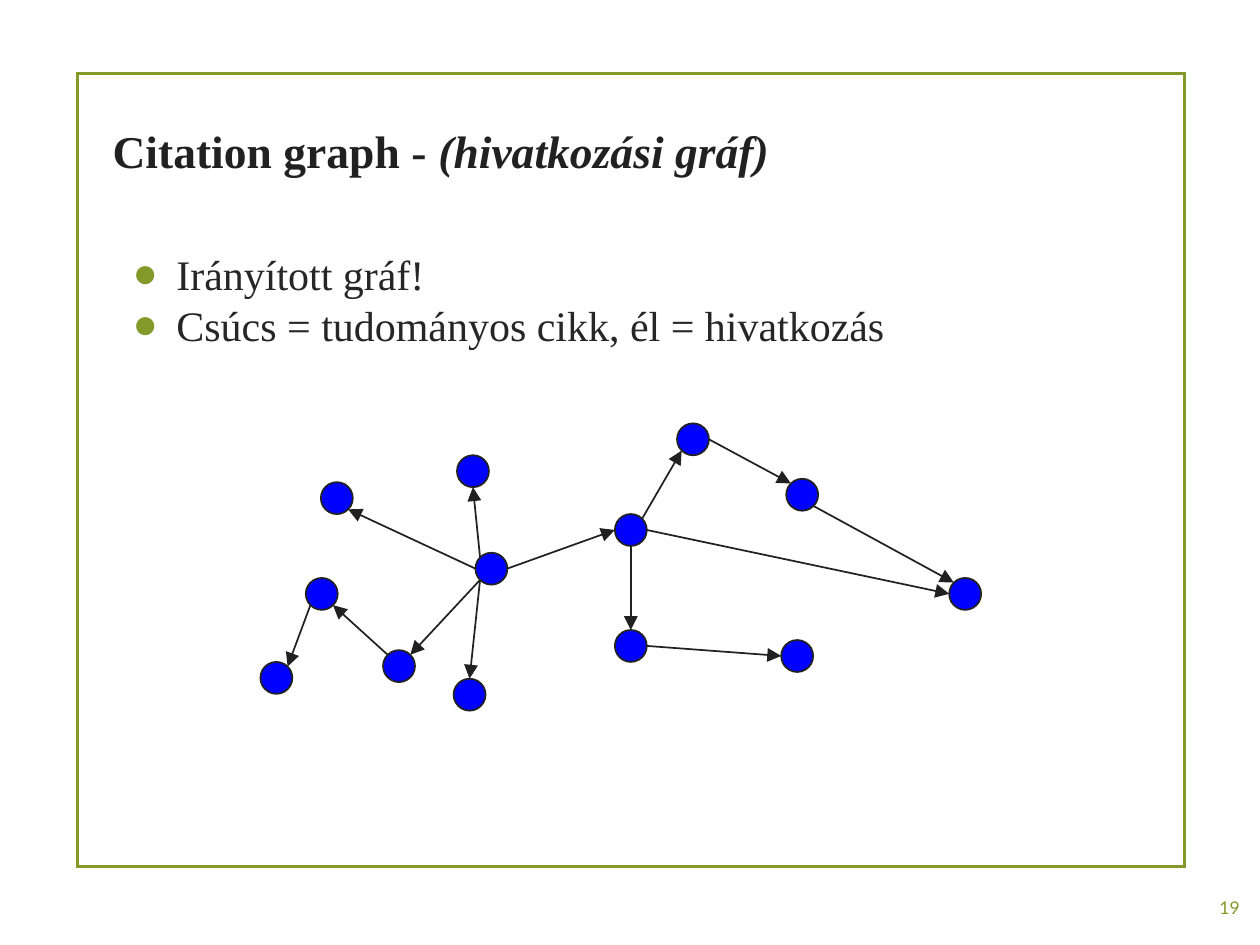
from math import cos, radians, sin

from lxml import etree
from pptx import Presentation
from pptx.dml.color import RGBColor
from pptx.enum.shapes import MSO_CONNECTOR, MSO_SHAPE
from pptx.enum.text import MSO_ANCHOR, MSO_AUTO_SIZE, PP_ALIGN
from pptx.oxml.ns import qn
from pptx.util import Inches, Pt

GREEN = RGBColor(0x83, 0x99, 0x2A)
INK = RGBColor(0x21, 0x21, 0x21)
BODY_INK = RGBColor(0x26, 0x26, 0x26)
BLUE = RGBColor(0x00, 0x00, 0xFF)
SERIF = "Times New Roman"

SLIDE_WIDTH = 7.5
SLIDE_HEIGHT = SLIDE_WIDTH * 3 / 4

NODE_SIZE = 0.19
# Left and top of each article in the graph
ARTICLES = {
    "hub": (2.83, 3.29),
    "upper left": (1.91, 2.87),
    "top": (2.72, 2.71),
    "far left": (1.82, 3.44),
    "lower left": (2.28, 3.87),
    "bottom": (2.7, 4.04),
    "corner": (1.55, 3.94),
    "second hub": (3.66, 3.06),
    "below second": (3.66, 3.75),
    "peak": (4.03, 2.52),
    "slope": (4.68, 2.85),
    "far right": (5.65, 3.44),
    "lower right": (4.65, 3.81),
}
# Compass sites on a node, as clockwise angles from east
SITES = {site: 45 * step for step, site in
         enumerate(("E", "SE", "S", "SW", "W", "NW", "N", "NE"))}
CITATIONS = [
    ("hub", "NW", "top", "S"),
    ("hub", "W", "upper left", "SE"),
    ("hub", "SW", "bottom", "N"),
    ("hub", "E", "second hub", "W"),
    ("hub", "SW", "lower left", "NE"),
    ("lower left", "NW", "far left", "SE"),
    ("far left", "SW", "corner", "NE"),
    ("second hub", "S", "below second", "N"),
    ("second hub", "NE", "peak", "SW"),
    ("second hub", "E", "far right", "W"),
    ("peak", "E", "slope", "NW"),
    ("slope", "SE", "far right", "NW"),
    ("below second", "E", "lower right", "W"),
]


def write_text(box, paragraphs, *, size, color, font=SERIF, bold=False,
               align=PP_ALIGN.LEFT, anchor=MSO_ANCHOR.TOP, bulleted=False):
    """Fill a box; each paragraph is a list of (text, italic) runs."""
    frame = box.text_frame
    frame.word_wrap = True
    frame.auto_size = MSO_AUTO_SIZE.NONE
    frame.vertical_anchor = anchor
    frame.margin_left = frame.margin_right = Inches(0.07)
    frame.margin_top = frame.margin_bottom = Inches(0.07)
    for index, runs in enumerate(paragraphs):
        paragraph = frame.add_paragraph() if index else frame.paragraphs[0]
        paragraph.alignment = align
        paragraph.line_spacing = 1.0
        paragraph.space_before = Pt(0)
        if bulleted:
            add_bullet(paragraph)
        for text, italic in runs:
            run = paragraph.add_run()
            run.text = text
            run.font.name = font
            run.font.size = Pt(size)
            run.font.bold = bold
            run.font.italic = italic
            run.font.color.rgb = color


def add_bullet(paragraph):
    properties = paragraph._p.get_or_add_pPr()
    properties.set("marL", str(Inches(0.38)))
    properties.set("indent", str(Inches(-0.26)))
    bullet_color = etree.SubElement(properties, qn("a:buClr"))
    etree.SubElement(bullet_color, qn("a:srgbClr"), val=str(GREEN))
    etree.SubElement(properties, qn("a:buFont"), typeface=SERIF)
    etree.SubElement(properties, qn("a:buChar"), char="●")


def add_outlined(slide, kind, left, top, width, height, line, weight, fill=None):
    shape = slide.shapes.add_shape(
        kind, Inches(left), Inches(top), Inches(width), Inches(height))
    shape.shadow.inherit = False
    if fill is None:
        shape.fill.background()
    else:
        shape.fill.solid()
        shape.fill.fore_color.rgb = fill
    shape.line.color.rgb = line
    shape.line.width = Pt(weight)
    etree.SubElement(shape.line._get_or_add_ln(), qn("a:miter"), lim="800000")


def site_point(article, site):
    left, top = ARTICLES[article]
    radius, angle = NODE_SIZE / 2, radians(SITES[site])
    return (Inches(left + radius + radius * cos(angle)),
            Inches(top + radius + radius * sin(angle)))


def add_citation(slide, citing, start_site, cited, end_site):
    arrow = slide.shapes.add_connector(
        MSO_CONNECTOR.STRAIGHT,
        *site_point(citing, start_site), *site_point(cited, end_site))
    arrow.line.color.rgb = INK
    arrow.line.width = Pt(0.75)
    etree.SubElement(arrow.line._get_or_add_ln(), qn("a:tailEnd"),
                     type="triangle", w="med", len="med")
    etree.SubElement(arrow._element.spPr, qn("a:effectLst"))


def add_text_box(slide, left, top, width, height):
    return slide.shapes.add_textbox(
        Inches(left), Inches(top), Inches(width), Inches(height))


def main():
    presentation = Presentation()
    presentation.slide_width = Inches(SLIDE_WIDTH)
    presentation.slide_height = Inches(SLIDE_HEIGHT)
    slide = presentation.slides.add_slide(presentation.slide_layouts[5])

    add_outlined(slide, MSO_SHAPE.RECTANGLE, 0.46, 0.44, 6.59, 4.72, GREEN, 1.25)

    title = slide.shapes.title
    title.left, title.top = Inches(0.6), Inches(0.66)
    title.width, title.height = Inches(6.31), Inches(0.44)
    write_text(title, [[("Citation graph - ", False), ("(hivatkozási gráf)", True)]],
               size=19.5, color=INK, bold=True)

    write_text(add_text_box(slide, 0.6, 1.41, 6.31, 0.58),
               [[("Irányított gráf!", False)],
                [("Csúcs = tudományos cikk, él = hivatkozás", False)]],
               size=18, color=BODY_INK, bulleted=True)

    write_text(add_text_box(slide, 7, 5.19, 0.45, 0.43), [[("19", False)]],
               size=7.5, color=GREEN, font="Lato", align=PP_ALIGN.RIGHT,
               anchor=MSO_ANCHOR.MIDDLE)

    for left, top in ARTICLES.values():
        add_outlined(slide, MSO_SHAPE.OVAL, left, top, NODE_SIZE, NODE_SIZE,
                     INK, 0.75, fill=BLUE)
    for citation in CITATIONS:
        add_citation(slide, *citation)

    presentation.save("out.pptx")


if __name__ == "__main__":
    main()
